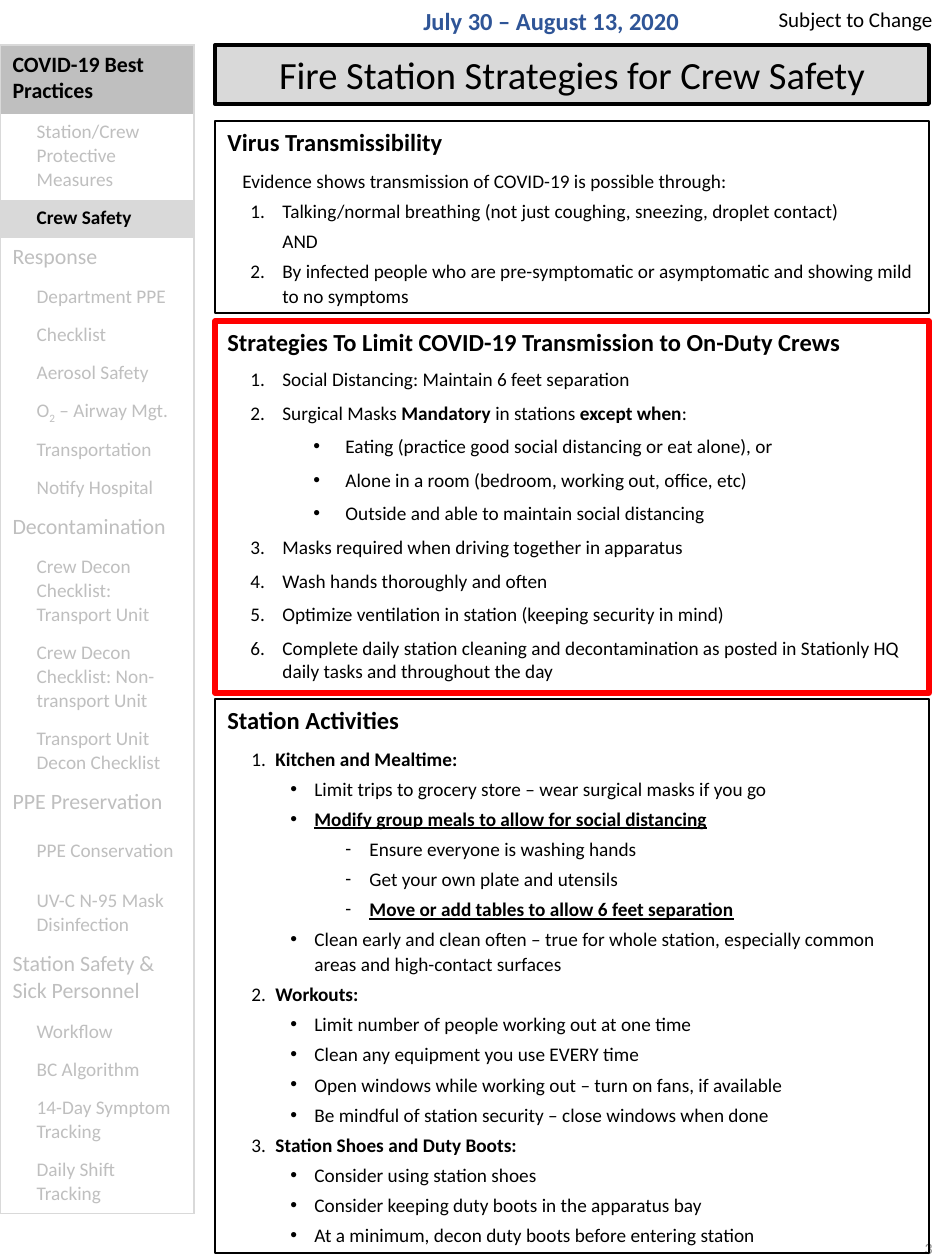
from lxml.etree import SubElement
from pptx import Presentation
from pptx.dml.color import RGBColor
from pptx.enum.shapes import MSO_SHAPE
from pptx.enum.text import MSO_ANCHOR, MSO_AUTO_SIZE, PP_ALIGN
from pptx.oxml.ns import qn
from pptx.util import Emu, Pt

EMU_PER_PX = 914400 / 126
FONT = "Calibri"
BLACK, GREY, PALE, MUTED = "000000", "BFBFBF", "D9D9D9", "8C8C8C"
RED, BLUE = "FF0000", "2F5597"

# Paragraph kinds: level, left margin, hanging indent (px), bullet
KINDS = {
    "lead": (0, 15, 0, None),
    "step": (0, 55, -32, "auto"),
    "substep": (1, 55, -32, "auto"),
    "between": (1, 55, 0, None),
    "wide bullet": (1, 118, -32, "•"),
    "topic": (0, 48, -24, None),
    "bullet": (1, 87, -24, "•"),
    "dash": (2, 142, -24, "-"),
}


def px(length):
    return Emu(round(length * EMU_PER_PX))


def color(hex_string):
    return RGBColor.from_string(hex_string)


class Page:
    def __init__(self, slide):
        self.slide = slide

    def style(self, run, size, ink, marks=""):
        """Format a run; marks may hold b (bold), u (underline), s (subscript)."""
        font = run.font
        font.name, font.size, font.color.rgb = FONT, Pt(size), color(ink)
        font.bold, font.underline = "b" in marks, "u" in marks
        if "s" in marks:
            run._r.get_or_add_rPr().set("baseline", "-25000")

    def add_runs(self, paragraph, runs, size, ink, marks=""):
        """Fill a paragraph with runs, each a string or a (text, marks) pair."""
        for part in runs:
            text, own_marks = part if isinstance(part, tuple) else (part, marks)
            run = paragraph.add_run()
            run.text = text
            self.style(run, size, ink, own_marks)

    def indent(self, paragraph, left, hanging=0):
        properties = paragraph._p.get_or_add_pPr()
        properties.set("marL", str(px(left)))
        properties.set("indent", str(px(hanging)))
        return properties

    def label(self, box, text, size, ink, align, marks="", grow=True):
        shape = self.slide.shapes.add_textbox(*map(px, box))
        frame = shape.text_frame
        frame.word_wrap = True
        if grow:
            frame.auto_size = MSO_AUTO_SIZE.SHAPE_TO_FIT_TEXT
        else:
            frame.vertical_anchor = MSO_ANCHOR.MIDDLE
        frame.paragraphs[0].alignment = align
        self.add_runs(frame.paragraphs[0], [text], size, ink, marks)

    def frame(self, box, line, weight, fill=None):
        """Draw a bordered rectangle and return its empty text frame."""
        shape = self.slide.shapes.add_shape(MSO_SHAPE.RECTANGLE, *map(px, box))
        shape.shadow.inherit = False
        shape.line.color.rgb, shape.line.width = color(line), Pt(weight)
        if fill:
            shape.fill.solid()
            shape.fill.fore_color.rgb = color(fill)
        else:
            shape.fill.background()
        text_frame = shape.text_frame
        text_frame.word_wrap = True
        text_frame.vertical_anchor = MSO_ANCHOR.TOP
        text_frame.auto_size = MSO_AUTO_SIZE.SHAPE_TO_FIT_TEXT
        return text_frame

    def banner(self, box, text):
        title = self.frame(box, BLACK, 2.25, PALE).paragraphs[0]
        title.alignment = PP_ALIGN.CENTER
        self.add_runs(title, [text], 22, BLACK)

    def panel(self, box, heading, items, line=BLACK, weight=1, spacing=14.2, gap=3):
        """Draw a box with a heading and items of (kind, run, run, ...)."""
        body = self.frame(box, line, weight)
        first = body.paragraphs[0]
        first.alignment = PP_ALIGN.LEFT
        self.add_runs(first, [heading], 14, BLACK, "b")
        substeps = 0
        for number, (kind, *runs) in enumerate(items):
            level, left, hanging, bullet = KINDS[kind]
            item = body.add_paragraph()
            item.alignment, item.level = PP_ALIGN.LEFT, level
            item.space_before = Pt(gap if number else 6)
            if spacing:
                item.line_spacing = Pt(spacing)
            properties = self.indent(item, left, hanging)
            substeps += kind == "substep"
            if bullet == "auto":
                numbering = SubElement(properties, qn("a:buAutoNum"), type="arabicPeriod")
                if substeps > 1:
                    numbering.set("startAt", str(substeps))
            elif bullet:
                SubElement(properties, qn("a:buFont"), typeface="Arial" if bullet == "•" else FONT)
                SubElement(properties, qn("a:buChar"), char=bullet)
            else:
                SubElement(properties, qn("a:buNone"))
            self.add_runs(item, runs, 11, BLACK)

    def border(self, cell, visible):
        properties = cell._tc.get_or_add_tcPr()
        for position, side in enumerate(("lnL", "lnR", "lnT", "lnB")):
            line = properties.makeelement(qn(f"a:{side}"), {"w": str(Pt(1))})
            if side in visible:
                fill = SubElement(line, qn("a:solidFill"))
                SubElement(fill, qn("a:srgbClr"), val=PALE)
            else:
                SubElement(line, qn("a:noFill"))
            properties.insert(position, line)

    def menu(self, left, top, width, rows, highlights):
        """Draw the section list from rows of (height, is_section, run, ...)."""
        height = sum(row[0] for row in rows)
        table = self.slide.shapes.add_table(
            len(rows), 1, *map(px, (left, top, width, height))).table
        table.first_row = table.horz_banding = False
        for index, (row_height, is_section, *runs) in enumerate(rows):
            table.rows[index].height = px(row_height)
            cell = table.cell(index, 0)
            shade = highlights.get(runs[0])
            if shade:
                cell.fill.solid()
                cell.fill.fore_color.rgb = color(shade)
            else:
                cell.fill.background()
            edges = ["lnL", "lnR"]
            edges += ["lnT"] if index == 0 else []
            edges += ["lnB"] if index == len(rows) - 1 else []
            self.border(cell, edges)
            entry = cell.text_frame.paragraphs[0]
            self.indent(entry, 0 if is_section else 24)
            self.add_runs(entry, runs, 12.5 if is_section else 11,
                          BLACK if shade else GREY, "b" if shade else "")


MENU = [
    (69, True, "COVID-19 Best Practices"),
    (86, False, "Station/Crew Protective Measures"),
    (38, False, "Crew Safety"),
    (41, True, "Response"),
    *((38, False, topic) for topic in ("Department PPE", "Checklist", "Aerosol Safety")),
    (38, False, "O", ("2", "s"), " – Airway Mgt."),
    *((38, False, topic) for topic in ("Transportation", "Notify Hospital")),
    (41, True, "Decontamination"),
    (86, False, "Crew Decon Checklist: Transport Unit"),
    (86, False, "Crew Decon Checklist: Non-transport Unit"),
    (62, False, "Transport Unit Decon Checklist"),
    (50, True, "PPE Preservation"),
    (50, False, "PPE Conservation"),
    (62, False, "UV-C N-95 Mask Disinfection"),
    (69, True, "Station Safety & Sick Personnel"),
    *((38, False, topic) for topic in ("Workflow", "BC Algorithm")),
    *((62, False, topic) for topic in ("14-Day Symptom Tracking", "Daily Shift Tracking")),
]
TRANSMISSION = [
    ("lead", "Evidence shows transmission of COVID-19 is possible through:"),
    ("substep", "Talking/normal breathing (not just coughing, sneezing, droplet contact)"),
    ("between", "AND"),
    ("substep", "By infected people who are pre-symptomatic or asymptomatic and showing mild to no symptoms"),
]
STRATEGIES = [
    ("step", "Social Distancing: Maintain 6 feet separation"),
    ("step", "Surgical Masks ", ("Mandatory", "b"), " in stations ", ("except when", "b"), ":"),
    ("wide bullet", "Eating (practice good social distancing or eat alone), or"),
    ("wide bullet", "Alone in a room (bedroom, working out, office, etc)"),
    ("wide bullet", "Outside and able to maintain social distancing"),
    ("step", "Masks required when driving together in apparatus"),
    ("step", "Wash hands thoroughly and often"),
    ("step", "Optimize ventilation in station (keeping security in mind)"),
    ("step", "Complete daily station cleaning and decontamination as posted in Stationly HQ "
             "daily tasks and throughout the day"),
]
ACTIVITIES = [
    ("topic", "1.\t", ("Kitchen and Mealtime:", "b")),
    ("bullet", "Limit trips to grocery store – wear surgical masks if you go"),
    ("bullet", ("Modify group meals to allow for social distancing", "bu")),
    ("dash", "Ensure everyone is washing hands"),
    ("dash", "Get your own plate and utensils"),
    ("dash", ("Move or add tables to allow 6 feet separation", "bu")),
    ("bullet", "Clean early and clean often – true for whole station, especially common "
               "areas and high-contact surfaces"),
    ("topic", "2.\t", ("Workouts:", "b")),
    ("bullet", "Limit number of people working out at one time"),
    ("bullet", "Clean any equipment you use EVERY time"),
    ("bullet", "Open windows while working out – turn on fans, if available"),
    ("bullet", "Be mindful of station security – close windows when done"),
    ("topic", "3.\t", ("Station Shoes and Duty Boots:", "b")),
    ("bullet", "Consider using station shoes"),
    ("bullet", "Consider keeping duty boots in the apparatus bay"),
    ("bullet", "At a minimum, decon duty boots before entering station"),
]


def main():
    deck = Presentation()
    deck.slide_width, deck.slide_height = px(945), px(1260)
    page = Page(deck.slides.add_slide(deck.slide_layouts[6]))
    left, width = 215, 714
    page.label((732, 1215, 213, 67), "3", 9, MUTED, PP_ALIGN.RIGHT, grow=False)
    page.label((732, 0, 213, 38), "Subject to Change", 12, BLACK, PP_ALIGN.RIGHT)
    page.menu(0, 45, 194, MENU, {"COVID-19 Best Practices": GREY, "Crew Safety": PALE})
    page.banner((left, 45, width, 59), "Fire Station Strategies for Crew Safety")
    page.panel((left, 121, width, 192), "Virus Transmissibility", TRANSMISSION)
    page.panel((left, 321, width, 372), "Strategies To Limit COVID-19 Transmission to On-Duty Crews",
               STRATEGIES, RED, 3, spacing=None, gap=6)
    page.panel((left, 699, width, 554), "Station Activities", ACTIVITIES)
    page.label((411, 0, 289, 43), "July 30 – August 13, 2020", 14, BLUE, PP_ALIGN.LEFT, "b")
    deck.save("out.pptx")


if __name__ == "__main__":
    main()
